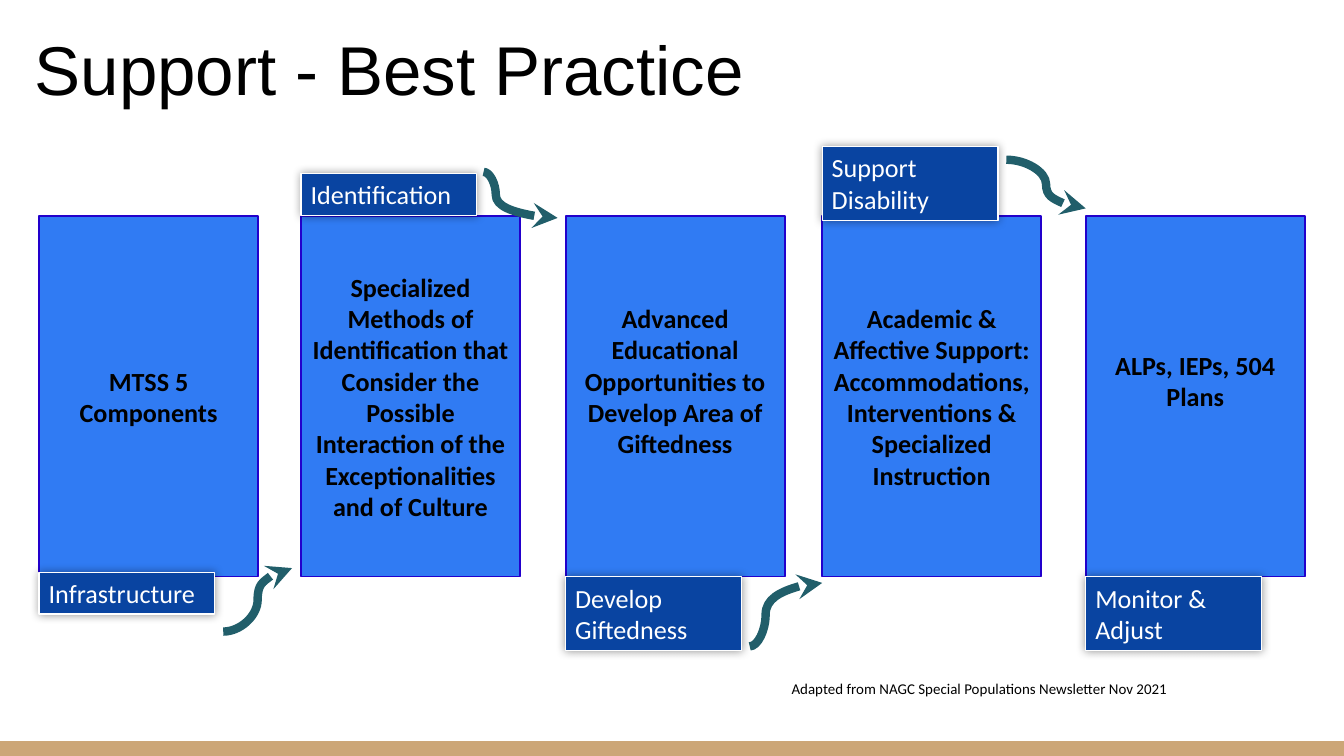
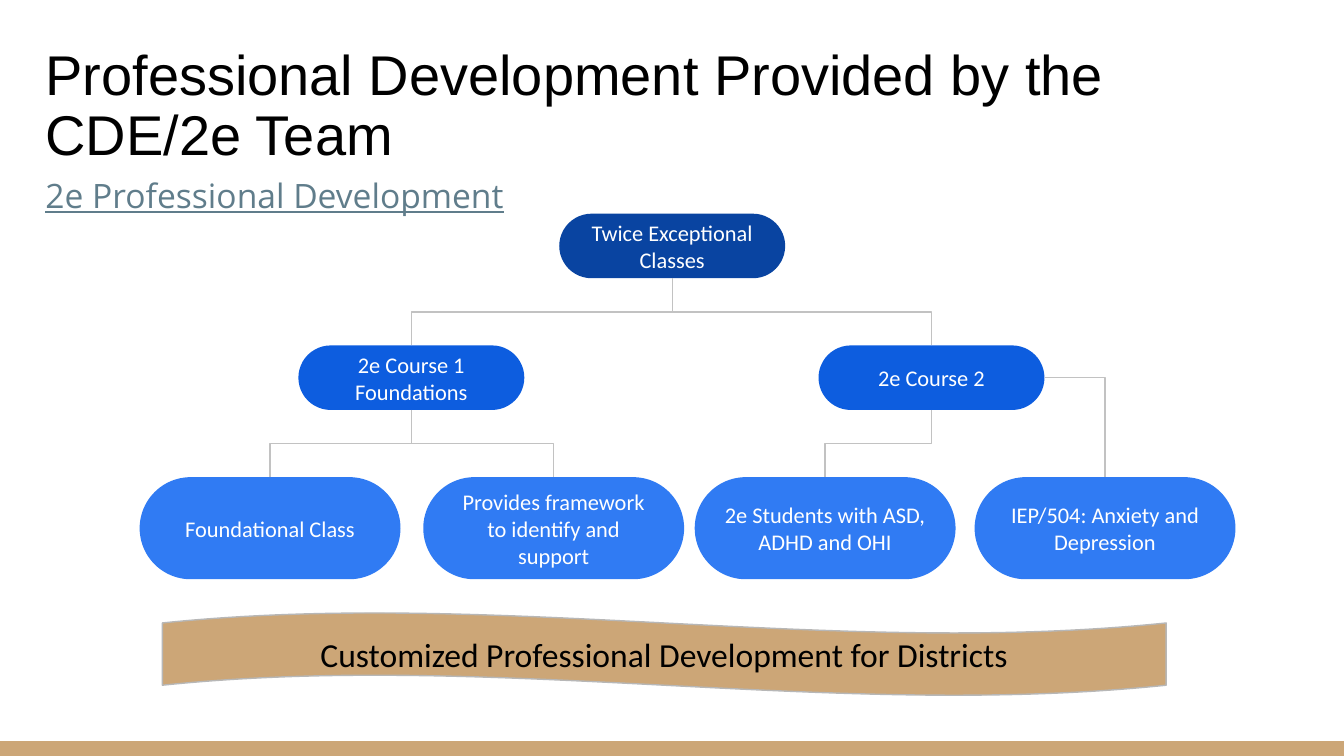
import collections
import dataclasses

import lxml.etree
import pptx
import pptx.dml.color
import pptx.enum.shapes
import pptx.enum.text
import pptx.oxml.ns
import pptx.util

Cm = pptx.util.Cm
Pt = pptx.util.Pt
Shape = pptx.enum.shapes.MSO_SHAPE
Link = pptx.enum.shapes.MSO_CONNECTOR
Align = pptx.enum.text.PP_ALIGN
Anchor = pptx.enum.text.MSO_ANCHOR
Box = collections.namedtuple("Box", "x y w h")
Step = collections.namedtuple("Step", "x text tag drop tall lift arrow")
Pill = collections.namedtuple("Pill", "x level text parent side")


@dataclasses.dataclass(frozen=True)
class Theme:
    """Colours, fonts and type sizes of the deck."""
    tan: str = "CCA677"
    navy: str = "0944A1"
    royal: str = "0D5DDF"
    blue: str = "307BF3"
    edge: str = "2200CC"
    teal: str = "215E6A"
    slate: str = "607D8B"
    wire: str = "C2C2C2"
    rim: str = "B7B7B7"
    black: str = "000000"
    white: str = "FFFFFF"
    head: str = "Arial"
    body: str = "Calibri"
    sub: str = "Open Sans"
    huge: int = 37
    large: int = 30
    mid: int = 18
    card: int = 14
    pill: int = 12
    note: int = 8


T = Theme()
TIGHT = (0.18, 0.1, 0.18, 0.1)
LOOSE = (0.25,) * 4
PAD = (0.18, 0.1, 0.18, 0.7)

STEPS = [
    Step(0, "MTSS 5 Components", "Infrastructure", 6.73, 0.79, False,
         (3.48, 7.85, 4.78, 6.65, 0.5)),
    Step(4.95, "Specialized Methods of Identification that Consider the Possible "
         "Interaction of the Exceptionalities and of Culture",
         "Identification", -0.81, 0.79, False, (3.45, -0.84, 4.85, 0.03, 0.165)),
    Step(9.95, "Advanced Educational Opportunities to Develop Area of Giftedness",
         "Develop Giftedness", 6.81, 1.4, True, (3.48, 8.13, 4.85, 6.93, 0.219)),
    Step(14.8, "Academic & Affective Support: Accommodations, Interventions & "
         "Specialized Instruction",
         "Support Disability", -1.32, 1.4, False, (3.48, -1.07, 4.98, -0.15, 0.5)),
    Step(19.78, "ALPs, IEPs, 504 Plans", "Monitor & Adjust", 6.81, 1.4, True, None),
]

LEVELS = [(0, 4.27, 1.22, T.navy), (2.49, 4.27, 1.22, T.royal), (4.98, 4.93, 1.93, T.blue)]
PILLS = [
    Pill(7.93, 0, "Twice Exceptional Classes", None, False),
    Pill(3, 1, "2e Course 1 Foundations", 0, False),
    Pill(12.83, 1, "2e Course 2", 0, False),
    Pill(0, 2, "Foundational Class", 1, False),
    Pill(5.36, 2, "Provides framework to identify and support", 1, False),
    Pill(10.49, 2, "2e Students with ASD, ADHD and OHI", 2, False),
    Pill(15.78, 2, "IEP/504: Anxiety and Depression", 2, True),
]


def put(item, vals):
    """Set each format value on the item."""
    for name, val in vals.items():
        setattr(item, name, val)


def tint(code):
    """Return the colour for a hex code."""
    return pptx.dml.color.RGBColor.from_string(code)


def add(parent, tag, **vals):
    """Append a drawing element with the given attributes."""
    return lxml.etree.SubElement(parent, pptx.oxml.ns.qn(tag), vals)


def write(shape, text, size, color=T.black, font=T.body, inset=TIGHT,
          anchor=Anchor.TOP, look=None, para=None):
    """Fill a shape with one styled paragraph."""
    frame = shape.text_frame
    sides = ("margin_left", "margin_top", "margin_right", "margin_bottom")
    put(frame, {"word_wrap": True, "vertical_anchor": anchor, "text": text})
    put(frame, {side: Cm(gap) for side, gap in zip(sides, inset)})
    put(frame.paragraphs[0], {"alignment": Align.LEFT, **(para or {})})
    for run in frame.paragraphs[0].runs:
        put(run.font, {"name": font, "size": Pt(size), **(look or {})})
        run.font.color.rgb = tint(color)


def label(slide, box, text, size, **style):
    """Add a text box."""
    write(slide.shapes.add_textbox(*map(Cm, box)), text, size, **style)


def block(slide, kind, box, fill, edge=None, width=0.75):
    """Add a flat shape with an optional outline."""
    shape = slide.shapes.add_shape(kind, *map(Cm, box))
    shape.shadow.inherit = False
    shape.fill.solid()
    shape.fill.fore_color.rgb = tint(fill)
    if edge:
        shape.line.color.rgb = tint(edge)
        shape.line.width = Pt(width)
    else:
        shape.line.fill.background()
    return shape


def wire(slide, kind, ends, color, width):
    """Add a connector without a shadow."""
    line = slide.shapes.add_connector(kind, *ends)
    line.line.color.rgb = tint(color)
    line.line.width = Pt(width)
    add(line._element.spPr, "a:effectLst")
    return line


def arrow(slide, box, dx, dy, ex, ey, bend):
    """Draw a curved arrow offset from the box corner."""
    ends = [Cm(n) for n in (box.x + dx, box.y + dy, box.x + ex, box.y + ey)]
    line = wire(slide, Link.CURVE, ends, T.teal, 4.5)
    add(line.line._get_or_add_ln(), "a:tailEnd", type="stealth")
    guides = line._element.spPr.prstGeom.get_or_add_avLst()
    add(guides, "a:gd", name="adj1", fmla=f"val {round(bend * 100000)}")


def step(slide, box, item):
    """Draw one column with its tag and arrow."""
    card = block(slide, Shape.RECTANGLE, box, T.blue, T.edge, 1)
    write(card, item.text, T.card, inset=PAD if item.lift else TIGHT,
          anchor=Anchor.MIDDLE, look={"bold": True}, para={"alignment": Align.CENTER})
    spot = Box(box.x, box.y + item.drop, 3.32, item.tall)
    tag = block(slide, Shape.RECTANGLE, spot, T.navy, T.white)
    write(tag, item.tag, T.card, T.white)
    glow = add(tag._element.spPr.find(pptx.oxml.ns.qn("a:effectLst")), "a:outerShdw",
               blurRad=str(Pt(5)), dist="0", dir="0", algn="ctr", rotWithShape="0")
    add(add(glow, "a:srgbClr", val=T.black), "a:alpha", val="40000")
    if item.arrow:
        arrow(slide, box, *item.arrow)


def flow(slide, box):
    """Lay the steps out from left to right."""
    for item in STEPS:
        step(slide, Box(box.x + item.x, box.y, 4.14, box.h), item)


def branch(slide, top, leaf):
    """Join a pill's bottom to the top of the pill below."""
    x, y = top.left + top.width // 2, top.top + top.height
    ex, ey = leaf.left + leaf.width // 2, leaf.top
    line = wire(slide, Link.ELBOW, (x, y, ex, ey), T.wire, 0.75)
    line.begin_connect(top, 2)
    line.end_connect(leaf, 0)
    wide, high = abs(ex - x), ey - y
    put(line, {"left": (x + ex - high) // 2, "top": (y + ey - wide) // 2,
               "width": high, "height": wide})
    turn = {"rot": "16200000", "flipH": "1"} if ex > x else {"rot": "5400000", "flipH": "0"}
    for name, val in turn.items():
        line._element.spPr.xfrm.set(name, val)


def elbow(slide, top, leaf):
    """Join a pill's right side to the top of the pill below."""
    ends = (top.left + top.width, top.top + top.height // 2,
            leaf.left + leaf.width // 2, leaf.top)
    line = wire(slide, Link.ELBOW, ends, T.wire, 0.75)
    line._element.spPr.prstGeom.set("prst", "bentConnector2")
    line.begin_connect(top, 3)
    line.end_connect(leaf, 0)


def tree(slide, box):
    """Draw the class tree with its links."""
    made = []
    for item in PILLS:
        y, w, h, fill = LEVELS[item.level]
        spot = Box(box.x + item.x, box.y + y, w, h)
        pill = block(slide, Shape.ROUNDED_RECTANGLE, spot, fill)
        pill.adjustments[0] = 0.5
        write(pill, item.text, T.pill, T.white, inset=LOOSE, anchor=Anchor.MIDDLE,
              para={"alignment": Align.CENTER})
        made.append(pill)
        if item.parent is not None:
            join = elbow if item.side else branch
            join(slide, made[item.parent], pill)


def wave(slide, box):
    """Draw the closing wave banner."""
    shape = block(slide, Shape.WAVE, box, T.tan, T.rim)
    write(shape, "Customized Professional Development for Districts", T.mid,
          inset=LOOSE, anchor=Anchor.MIDDLE, para={"alignment": Align.CENTER})


def title(slide, box, text, size, **style):
    """Write the slide title."""
    label(slide, box, text, size, font=T.head, **style)


def start(deck):
    """Add a blank slide with the foot band."""
    slide = deck.slides.add_slide(deck.slide_layouts[6])
    block(slide, Shape.RECTANGLE, Box(0, 14.01, 25.4, 0.28), T.tan)
    return slide


def support(deck):
    """Build the best practice slide."""
    slide = start(deck)
    label(slide, Box(14.78, 12.75, 10.62, 0.53),
          "Adapted from NAGC Special Populations Newsletter Nov 2021", T.note)
    flow(slide, Box(0.74, 4.09, 23.92, 6.81))
    title(slide, Box(0.41, 0.25, 14.4, 2.08), "Support - Best Practice", T.huge, inset=LOOSE)


def classes(deck):
    """Build the class tree slide."""
    slide = start(deck)
    title(slide, Box(0.86, 0.89, 23.67, 2.31),
          "Professional Development Provided by the\vCDE/2e Team", T.large,
          inset=(0,) * 4, para={"line_spacing": 0.9})
    label(slide, Box(0.86, 3.4, 23.67, 9.32), "2e Professional Development", T.mid,
          color=T.slate, font=T.sub, inset=(0, 0, 0, 0.13), look={"underline": True},
          para={"line_spacing": 0.9, "space_before": Pt(10)})
    tree(slide, Box(2.64, 4.04, 20.71, 6.91))
    wave(slide, Box(3.07, 11.58, 18.97, 1.57))


def main():
    """Build and save the deck."""
    deck = pptx.Presentation()
    put(deck, {"slide_width": Cm(25.4), "slide_height": Cm(14.29)})
    support(deck)
    classes(deck)
    deck.save("out.pptx")


if __name__ == "__main__":
    main()
